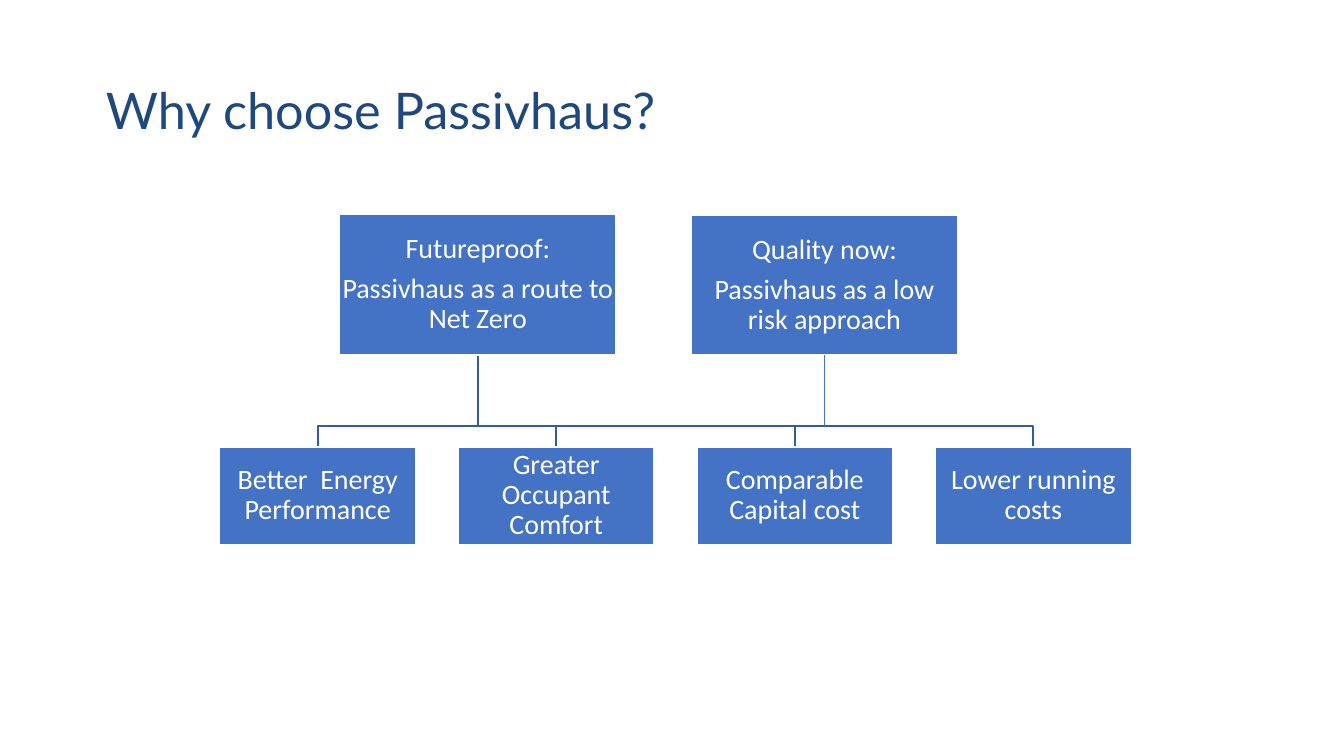
from dataclasses import dataclass

from lxml.etree import SubElement
from pptx import Presentation
from pptx.dml.color import RGBColor as Rgb
from pptx.enum.shapes import MSO_CONNECTOR as Conn, MSO_SHAPE as Form
from pptx.enum.text import MSO_ANCHOR as Anchor, PP_ALIGN as Align
from pptx.oxml.ns import qn
from pptx.util import Pt


@dataclass(frozen=True)
class Theme:
    title: str = "1F497D"
    box: str = "4472C4"
    link: str = "365B9D"
    white: str = "FFFFFF"
    head: str = "Lato"
    body: str = "Calibri"
    big: float = 27
    small: float = 15
    line: float = 1


def write(frame, text, font, size, color, align=Align.LEFT, gap=0, inset=None):
    frame.word_wrap = True
    frame.vertical_anchor = Anchor.MIDDLE
    if inset is not None:
        frame.margin_left = frame.margin_right = Pt(inset)
        frame.margin_top = frame.margin_bottom = Pt(inset)
    rows = text.split("\n")
    for i, row in enumerate(rows):
        para = frame.paragraphs[0] if i == 0 else frame.add_paragraph()
        para.alignment = align
        para.line_spacing = 0.9
        para.space_before = Pt(0)
        para.space_after = Pt(gap)
        run = para.add_run()
        run.text = row
        run.font.name = font
        run.font.size = Pt(size)
        run.font.color.rgb = Rgb.from_string(color)


class Chart:
    def __init__(self, slide, theme):
        self.shapes = slide.shapes
        self.theme = theme

    def stroke(self, line, color):
        line.color.rgb = Rgb.from_string(color)
        line.width = Pt(self.theme.line)

    def title(self, text, x, y, wide, high):
        look = self.theme
        box = self.shapes.add_textbox(Pt(x), Pt(y), Pt(wide), Pt(high))
        write(box.text_frame, text, look.head, look.big, look.title)

    def box(self, text, x, y, wide, high):
        look = self.theme
        box = self.shapes.add_shape(Form.RECTANGLE, Pt(x), Pt(y), Pt(wide), Pt(high))
        box.shadow.inherit = False
        box.fill.solid()
        box.fill.fore_color.rgb = Rgb.from_string(look.box)
        self.stroke(box.line, look.white)
        write(box.text_frame, text, look.body, look.small, look.white,
              align=Align.CENTER, gap=5.25, inset=0.72)
        return box

    def branch(self, points):
        first, *rest = [(Pt(x), Pt(y)) for x, y in points]
        pen = self.shapes.build_freeform(*first)
        pen.add_line_segments(rest, close=False)
        path = pen.convert_to_shape()
        path.shadow.inherit = False
        path.fill.background()
        self.stroke(path.line, self.theme.link)

    def drop(self, box, foot):
        mid = box.left + box.width // 2
        line = self.shapes.add_connector(
            Conn.STRAIGHT, mid, box.top + box.height, mid, Pt(foot))
        line.begin_connect(box, 2)
        self.stroke(line.line, self.theme.box)
        SubElement(line._element.spPr, qn("a:effectLst"))


def main():
    deck = Presentation()
    deck.slide_width, deck.slide_height = Pt(720), Pt(405)
    chart = Chart(deck.slides.add_slide(deck.slide_layouts[6]), Theme())
    chart.title("Why choose Passivhaus?", 49.7, 21.6, 620.6, 78.5)

    root_x, root_y, root_w, root_h = 181.8, 114.8, 148.4, 75.2
    leaf_x, leaf_y, leaf_w, leaf_h, step = 117.6, 239.3, 105.2, 52.4, 127.8
    bus = 228.3
    stem = root_x + root_w / 2
    gains = ["Better  Energy Performance", "Greater Occupant Comfort",
             "Comparable Capital cost", "Lower running costs"]
    lefts = [leaf_x + i * step for i in range(len(gains))]

    for left in reversed(lefts):
        mid = left + leaf_w / 2
        chart.branch([(stem, root_y + root_h), (stem, bus), (mid, bus), (mid, leaf_y)])
    chart.box("Futureproof:\nPassivhaus as a route to Net Zero",
              root_x, root_y, root_w, root_h)
    for text, left in zip(gains, lefts):
        chart.box(text, left, leaf_y, leaf_w, leaf_h)
    now = chart.box("Quality now:\nPassivhaus as a low risk approach",
                    370.2, 115.2, 143, root_h)
    chart.drop(now, bus)

    deck.save("out.pptx")


if __name__ == "__main__":
    main()
